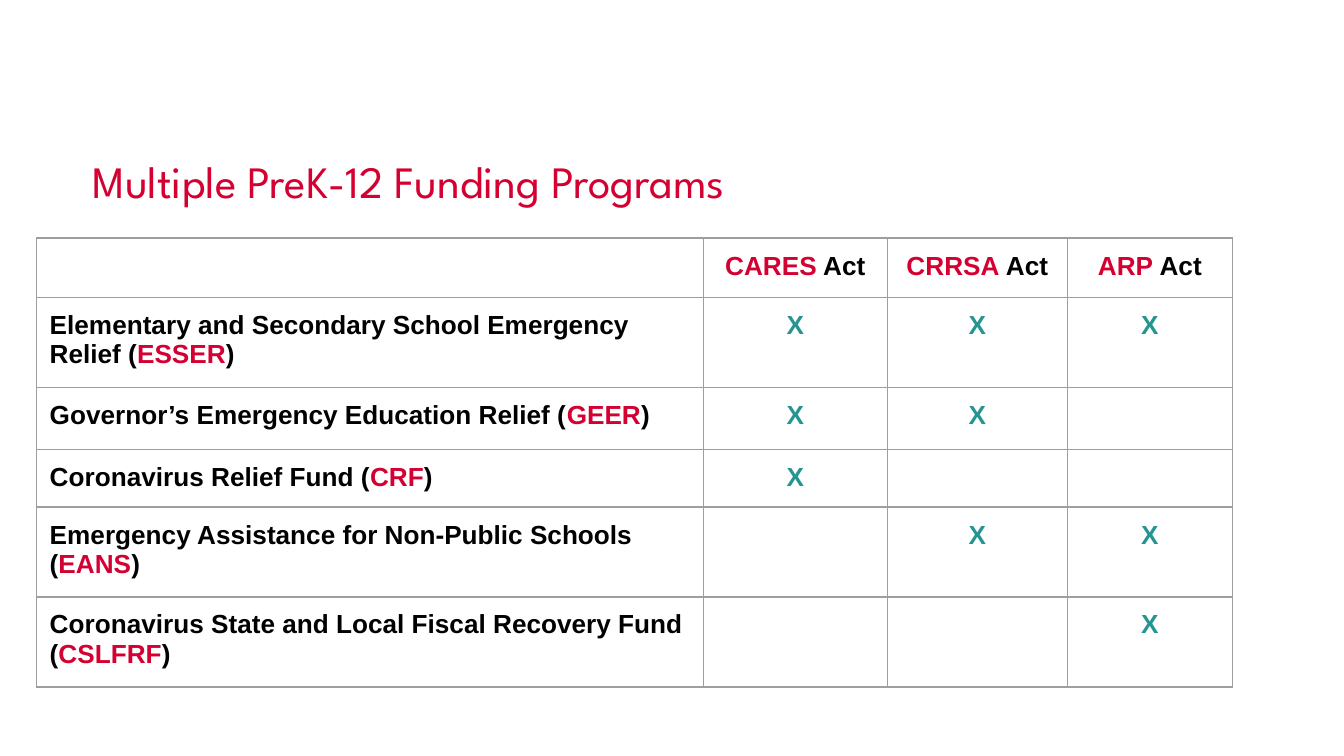
from dataclasses import dataclass

from lxml.etree import SubElement
from pptx import Presentation
from pptx.dml.color import RGBColor
from pptx.enum.text import MSO_ANCHOR, PP_ALIGN
from pptx.oxml.ns import qn
from pptx.util import Cm, Pt


@dataclass(frozen=True)
class Theme:
    """Colours, fonts and type sizes of the deck."""
    accent: str = "D50032"
    mark: str = "259591"
    ink: str = "000000"
    rule: str = "9E9E9E"
    rule_width: float = 0.75
    title_font: str = "League Spartan"
    body_font: str = "Arial"
    title_size: int = 24
    body_size: int = 14


THEME = Theme()
ACTS = ["CARES", "CRRSA", "ARP"]
PROGRAMS = [
    ("Elementary and Secondary School Emergency Relief", "ESSER", ACTS),
    ("Governor’s Emergency Education Relief", "GEER", ["CARES", "CRRSA"]),
    ("Coronavirus Relief Fund", "CRF", ["CARES"]),
    ("Emergency Assistance for Non-Public Schools", "EANS", ["CRRSA", "ARP"]),
    ("Coronavirus State and Local Fiscal Recovery Fund", "CSLFRF", ["ARP"]),
]
COLUMN_WIDTHS = [12.6, 3.48, 3.4, 3.12]
ROW_HEIGHTS = [1.12, 1.7, 1.17, 1.09, 1.7, 1.7]


def add_span(para, text, color=THEME.ink, size=THEME.body_size, font=THEME.body_font, bold=True):
    """Append a formatted run of text to a paragraph."""
    span = para.add_run()
    span.text = text
    span.font.name = font
    span.font.size = Pt(size)
    span.font.bold = bold
    span.font.color.rgb = RGBColor.from_string(color)


def add_title(page, text, left, top, width, height):
    """Place the slide title in the given box."""
    box = page.shapes.add_textbox(Cm(left), Cm(top), Cm(width), Cm(height))
    frame = box.text_frame
    frame.word_wrap = True
    frame.vertical_anchor = MSO_ANCHOR.MIDDLE
    frame.margin_left = frame.margin_right = Cm(0.18)
    frame.margin_top = frame.margin_bottom = Cm(0.1)
    para = frame.paragraphs[0]
    para.line_spacing = 0.9
    add_span(para, text, color=THEME.accent, size=THEME.title_size,
             font=THEME.title_font, bold=False)


def style_cell(cell):
    """Give a cell four thin borders and no fill."""
    properties = cell._tc.get_or_add_tcPr()
    for side in ("a:lnL", "a:lnR", "a:lnT", "a:lnB"):
        line = SubElement(properties, qn(side), w=str(Pt(THEME.rule_width)))
        fill = SubElement(line, qn("a:solidFill"))
        SubElement(fill, qn("a:srgbClr"), val=THEME.rule)
    cell.fill.background()


def fill_cell(cell, spans, align):
    """Write coloured text spans into a cell."""
    cell.margin_left = cell.margin_right = Cm(0.25)
    cell.margin_top = cell.margin_bottom = Cm(0.25)
    para = cell.text_frame.paragraphs[0]
    para.alignment = align
    for text, color in spans:
        add_span(para, text, color=color)


def add_program_table(page, left, top, width, height):
    """Place the grid of programs against the acts that fund them."""
    frame = page.shapes.add_table(len(ROW_HEIGHTS), len(COLUMN_WIDTHS),
                                  Cm(left), Cm(top), Cm(width), Cm(height))
    table = frame.table
    table.first_row = table.horz_banding = False
    for column, share in zip(table.columns, COLUMN_WIDTHS):
        column.width = Cm(width * share / sum(COLUMN_WIDTHS))
    for row, share in zip(table.rows, ROW_HEIGHTS):
        row.height = Cm(height * share / sum(ROW_HEIGHTS))
    for cell in table.iter_cells():
        style_cell(cell)
    for column, act in enumerate(ACTS, 1):
        fill_cell(table.cell(0, column), [(act, THEME.accent), (" Act", THEME.ink)],
                  PP_ALIGN.CENTER)
    for row, (name, acronym, funders) in enumerate(PROGRAMS, 1):
        label = [(f"{name} (", THEME.ink), (acronym, THEME.accent), (")", THEME.ink)]
        fill_cell(table.cell(row, 0), label, PP_ALIGN.LEFT)
        for act in funders:
            fill_cell(table.cell(row, ACTS.index(act) + 1), [("X", THEME.mark)],
                      PP_ALIGN.CENTER)


def main():
    """Build and save the deck."""
    deck = Presentation()
    deck.slide_width, deck.slide_height = Cm(25.4), Cm(14.29)
    page = deck.slides.add_slide(deck.slide_layouts[6])
    add_title(page, "Multiple PreK-12 Funding Programs", 1.57, 2.57, 21.89, 1.83)
    add_program_table(page, 0.69, 4.5, 22.6, 8.48)
    deck.save("out.pptx")


if __name__ == "__main__":
    main()
